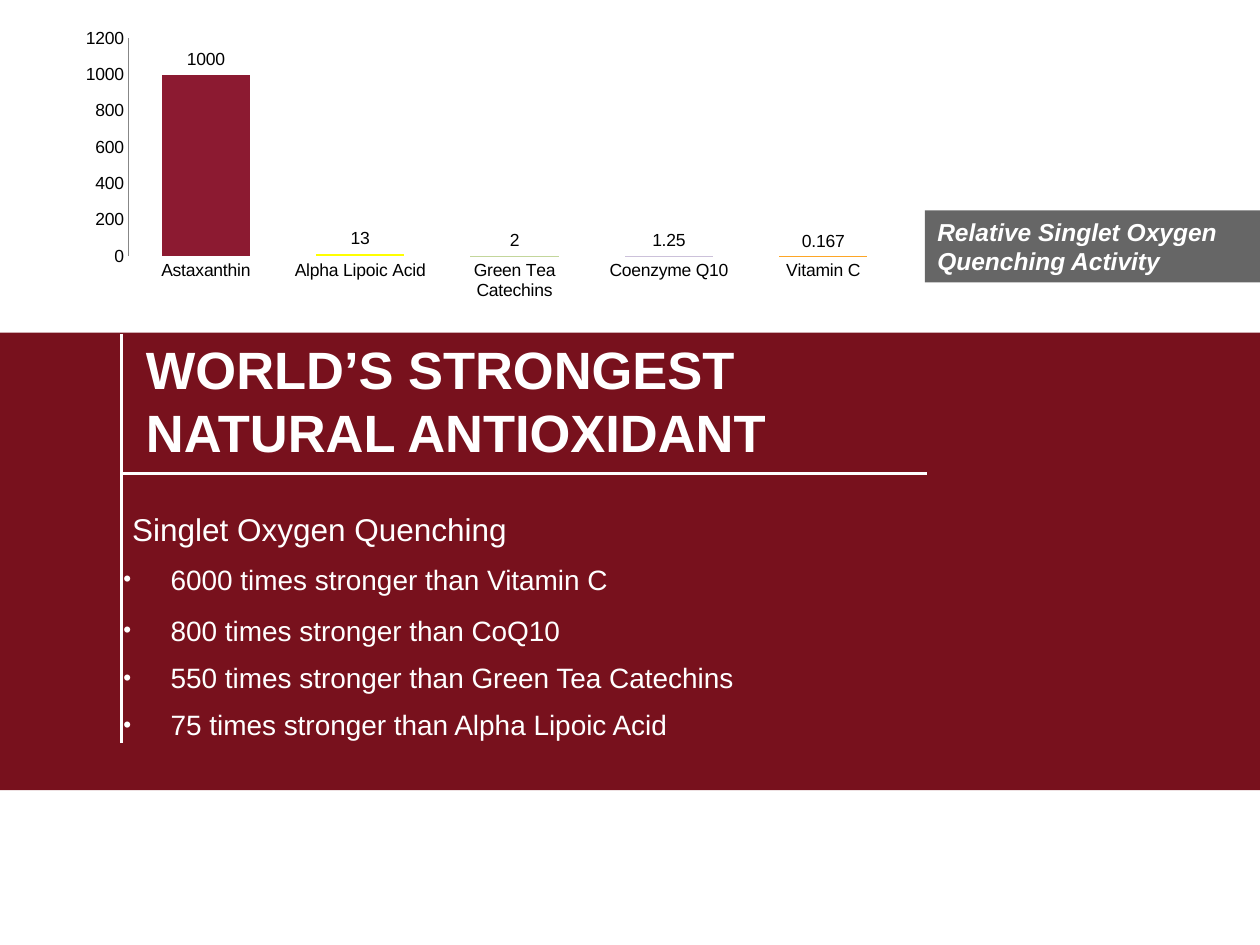
from lxml import etree
from pptx import Presentation
from pptx.chart.data import CategoryChartData
from pptx.dml.color import RGBColor
from pptx.enum.chart import XL_CHART_TYPE, XL_LABEL_POSITION, XL_TICK_MARK
from pptx.enum.shapes import MSO_CONNECTOR, MSO_SHAPE
from pptx.enum.text import MSO_ANCHOR, MSO_AUTO_SIZE, PP_ALIGN
from pptx.oxml import parse_xml
from pptx.oxml.ns import nsdecls, qn
from pptx.util import Pt

RECTANGLE = MSO_SHAPE.RECTANGLE
STRAIGHT = MSO_CONNECTOR.STRAIGHT
COLUMNS = XL_CHART_TYPE.COLUMN_CLUSTERED
NO_TICKS = XL_TICK_MARK.NONE
OUTSIDE = XL_LABEL_POSITION.OUTSIDE_END
TOP, MIDDLE = MSO_ANCHOR.TOP, MSO_ANCHOR.MIDDLE
LEFT = PP_ALIGN.LEFT

FONT = "Arial"
WHITE, BLACK, MAROON, RULE = "FFFFFF", "000000", "78111D", "FEFEFE"
AXIS_GREY, SERIES_GREY = "878787", "A6A6A6"

TITLE = ["WORLD’S STRONGEST", "NATURAL ANTIOXIDANT"]
CAPTION = "Relative Singlet Oxygen Quenching Activity"
HEADING = "Singlet Oxygen Quenching"
CLAIMS = [  # text, space before
    ("6000 times stronger than Vitamin C", 6),
    ("800 times stronger than CoQ10", 6),
    ("550 times stronger than Green Tea Catechins", 4),
    ("75 times stronger than Alpha Lipoic Acid", 4),
]
ACTIVITY = [  # antioxidant, value, column colour
    ("Astaxanthin", 1000, "8C1A31"),
    ("Alpha Lipoic Acid", 13, "FFFF00"),
    ("Green Tea Catechins", 2, "C3D69B"),
    ("Coenzyme Q10", 1.25, "CCC1DA"),
    ("Vitamin C", 0.167, "FDA627"),
]
PLOT_AREA = {"x": 0.067, "y": 0.043, "w": 0.906, "h": 0.793}

# left, top, width, height
BAND_BOX = (0, 190, 720, 261.5)
CAPTION_BOX = (528.5, 120.2, 192, 41.2)
TITLE_BOX = (76.2, 188.6, 605.5, 80)
CLAIMS_BOX = (63.4, 286, 586.8, 71.3)
CHART_BOX = (41, 15.1, 486.7, 157)
# start x, start y, end x, end y
RULES = [(69.4, 190.8, 69.4, 424.6), (69.4, 270.7, 529.8, 270.7)]


def color(hex_code):
    return RGBColor.from_string(hex_code)


def points(values):
    return [Pt(value) for value in values]


def style(font, size, hex_code=WHITE, **formats):
    font.name, font.size = FONT, Pt(size)
    font.color.rgb = color(hex_code)
    for attribute, value in formats.items():
        setattr(font, attribute, value)


def set_frame(frame, anchor):
    formats = {"word_wrap": True, "auto_size": MSO_AUTO_SIZE.NONE, "vertical_anchor": anchor}
    for attribute, value in formats.items():
        setattr(frame, attribute, value)


def set_indent(paragraph, left, first_line=0):
    properties = paragraph._p.get_or_add_pPr()
    properties.set("marL", str(Pt(left)))
    properties.set("indent", str(Pt(first_line)))
    return properties


def add_rectangle(slide, box, hex_code):
    rectangle = slide.shapes.add_shape(RECTANGLE, *points(box))
    rectangle.shadow.inherit = False
    rectangle.fill.solid()
    rectangle.fill.fore_color.rgb = color(hex_code)
    rectangle.line.fill.background()
    return rectangle


def add_rule(slide, ends):
    rule = slide.shapes.add_connector(STRAIGHT, *points(ends))
    rule.line.color.rgb = color(RULE)
    rule.line.width = Pt(2)
    etree.SubElement(rule._element.spPr, qn("a:effectLst"))


def add_caption(slide):
    caption = add_rectangle(slide, CAPTION_BOX, BLACK)
    shade = caption.fill._xPr.find(".//" + qn("a:srgbClr"))
    etree.SubElement(shade, qn("a:alpha"), val="60000")
    set_frame(caption.text_frame, TOP)
    paragraph = caption.text_frame.paragraphs[0]
    paragraph.text, paragraph.alignment = CAPTION, LEFT
    style(paragraph.font, 14, bold=True, italic=True)


def fill_title(title):
    title.left, title.top, title.width, title.height = points(TITLE_BOX)
    frame = title.text_frame
    set_frame(frame, MIDDLE)
    frame.text = "\n".join(TITLE)
    for paragraph in frame.paragraphs:
        paragraph.alignment = LEFT
        style(paragraph.font, 30, bold=True)


def add_claims(slide):
    frame = slide.shapes.add_textbox(*points(CLAIMS_BOX)).text_frame
    set_frame(frame, TOP)
    heading = frame.paragraphs[0]
    heading.text, heading.line_spacing = HEADING, 1.1
    set_indent(heading, 5)
    style(heading.font, 18)
    for text, space_before in CLAIMS:
        claim = frame.add_paragraph()
        claim.text, claim.line_spacing = text, 1.1
        claim.space_before, claim.space_after = Pt(space_before), Pt(2)
        properties = set_indent(claim, 27, -27)
        etree.SubElement(properties, qn("a:buSzPct"), val="80000")
        etree.SubElement(properties, qn("a:buFont"), typeface=FONT)
        etree.SubElement(properties, qn("a:buChar"), char="•")
        style(claim.font, 16)


def set_plot_area(chart):
    """Fix the inner plot area as fractions of the chart."""
    modes = '<c:layoutTarget val="inner"/><c:xMode val="edge"/><c:yMode val="edge"/>'
    sides = "".join(f'<c:{side} val="{part}"/>' for side, part in PLOT_AREA.items())
    plot_area = chart._chartSpace.chart.plotArea
    for layout in plot_area.findall(qn("c:layout")):
        plot_area.remove(layout)
    plot_area.insert(0, parse_xml(
        f'<c:layout {nsdecls("c")}><c:manualLayout>{modes}{sides}</c:manualLayout></c:layout>'))


def add_activity_chart(slide):
    names, values, fills = zip(*ACTIVITY)
    data = CategoryChartData()
    data.categories = names
    data.add_series("Series 1", values)
    chart = slide.shapes.add_chart(COLUMNS, *points(CHART_BOX), data).chart
    chart.has_legend = chart.has_title = False
    style(chart.font, 10, BLACK)
    set_plot_area(chart)

    for axis in (chart.category_axis, chart.value_axis):
        axis.major_tick_mark = axis.minor_tick_mark = NO_TICKS
        axis.has_major_gridlines = False
    chart.category_axis.format.line.fill.background()
    scale = chart.value_axis
    scale.minimum_scale, scale.maximum_scale, scale.major_unit = 0, 1200, 200
    scale.format.line.color.rgb = color(AXIS_GREY)

    plot = chart.plots[0]
    plot.gap_width, plot.vary_by_categories = 75, False
    plot.has_data_labels = True
    plot.data_labels.show_value = True
    plot.data_labels.position = OUTSIDE
    series = plot.series[0]
    series.format.fill.solid()
    series.format.fill.fore_color.rgb = color(SERIES_GREY)
    for index, hex_code in enumerate(fills):
        column = series.points[index].format.fill
        column.solid()
        column.fore_color.rgb = color(hex_code)


def main():
    deck = Presentation()
    deck.slide_width, deck.slide_height = Pt(720), Pt(540)
    slide = deck.slides.add_slide(deck.slide_layouts[5])
    band = add_rectangle(slide, BAND_BOX, MAROON)
    slide.shapes._spTree.insert(2, band._element)  # behind the title
    for ends in RULES:
        add_rule(slide, ends)
    add_caption(slide)
    add_claims(slide)
    fill_title(slide.shapes.title)
    add_activity_chart(slide)
    deck.save("out.pptx")


if __name__ == "__main__":
    main()
